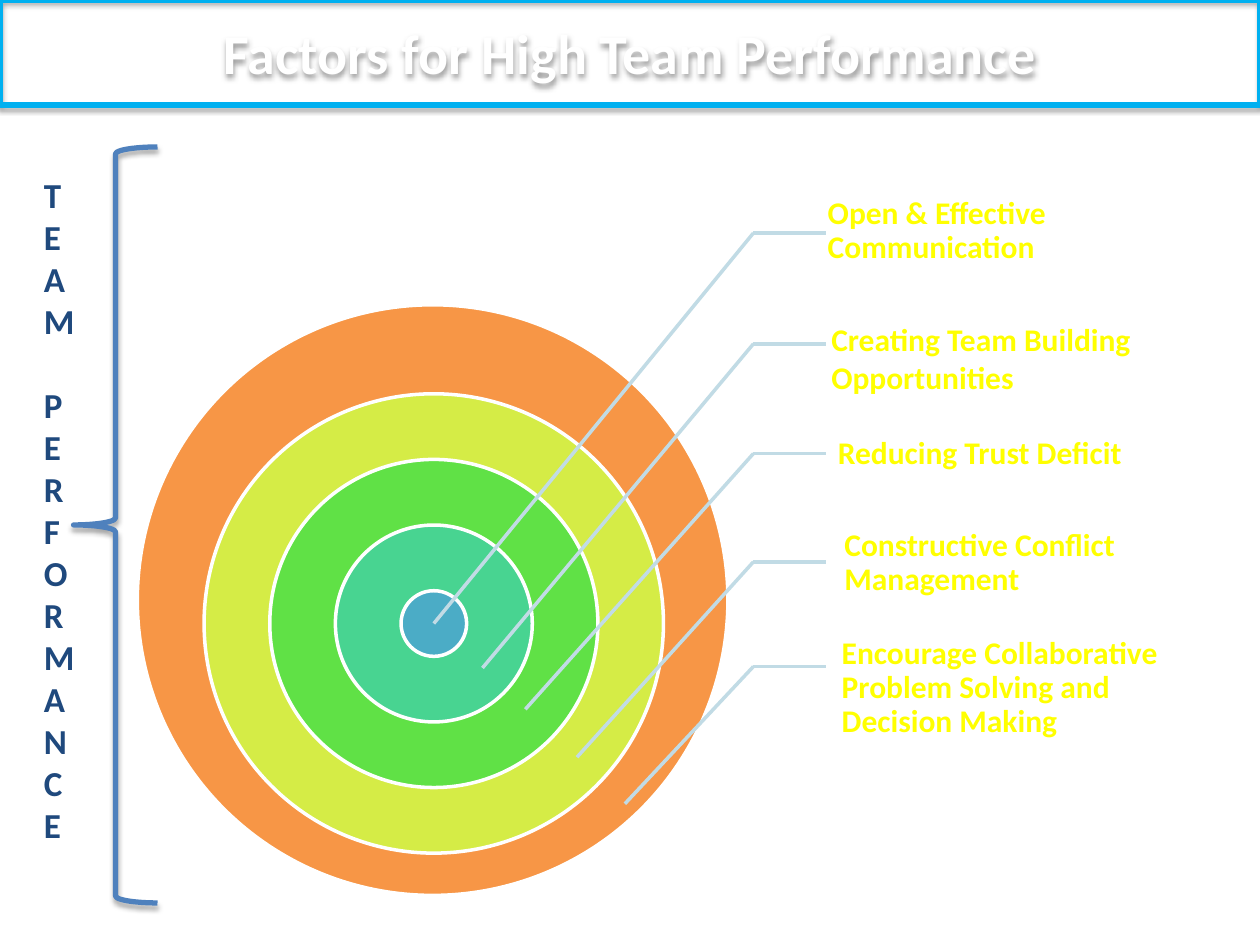
import pptx
import pptx.util
import pptx.dml.color
import pptx.enum.shapes
import pptx.enum.text
import pptx.oxml
import pptx.oxml.ns

Pt = pptx.util.Pt
SHAPE = pptx.enum.shapes.MSO_SHAPE
ANCHOR = pptx.enum.text.MSO_ANCHOR
ALIGN = pptx.enum.text.PP_ALIGN
COLORS = {
    "frame": "00B0F0", "white": "FFFFFF", "label": "FFFF00", "leader": "C1DBE5",
    "brace": "4F81BD", "side": "1F497D", "shadow": "000000",
}
RING_COLORS = ["D5EC46", "60E146", "48D491", "4BACC6"]
OUTER_COLOR = "F79646"

# Text, label box (left, top, width, height), line spacing, leader y, leader end;
# all positions are relative to the target region.
FACTORS = [
    ("Open & Effective Communication", (384.5, -72, 158.5, 60), 0.9, -41, (169.4, 182.1)),
    ("Creating Team Building Opportunities", (386.5, 0, 184.5, 60.5), 1, 22.3, (197.2, 207.5)),
    ("Reducing Trust Deficit", (390.3, 63.5, 185, 44), 0.9, 85, (221.7, 231.1)),
    ("Constructive Conflict Management", (394, 117.5, 168.5, 60), 0.9, 146.9, (251.2, 258.5)),
    ("Encourage Collaborative Problem Solving and Decision Making",
     (392.5, 191.5, 204.5, 55.5), 0.9, 206.7, (278.6, 285.1)),
]


def rgb(value):
    return pptx.dml.color.RGBColor.from_string(value)


def set_effects(shape, content=""):
    """Replace the theme's shadow by the given effects, or by none."""
    effects = pptx.oxml.parse_xml(
        f'<a:effectLst {pptx.oxml.ns.nsdecls("a")}>{content}</a:effectLst>')
    shape._element.spPr.append(effects)


def add_shadow(shape, blur, distance, opacity):
    set_effects(shape, (
        f'<a:outerShdw blurRad="{Pt(blur)}" dist="{Pt(distance)}" dir="5400000" '
        f'rotWithShape="0"><a:srgbClr val="{COLORS["shadow"]}">'
        f'<a:alpha val="{opacity * 1000}"/></a:srgbClr></a:outerShdw>'))


def add_outline(page, kind, box, color, width, fill=None):
    shape = page.shapes.add_shape(kind, *map(Pt, box))
    if fill:
        shape.fill.solid()
        shape.fill.fore_color.rgb = rgb(fill)
    else:
        shape.fill.background()
    shape.line.color.rgb = rgb(color)
    shape.line.width = Pt(width)
    return shape


def write(frame, text, size, color, align=ALIGN.LEFT, spacing=1):
    frame.word_wrap = True
    para = frame.paragraphs[0]
    para.alignment = align
    para.line_spacing = spacing
    span = para.add_run()
    span.text = text
    span.font.name = "Calibri"
    span.font.size = Pt(size)
    span.font.bold = True
    span.font.color.rgb = rgb(color)


def add_title(page, box):
    banner = add_outline(page, SHAPE.RECTANGLE, box, COLORS["frame"], 3)
    add_shadow(banner, 3.1, 1.6, 38)
    banner.text_frame.vertical_anchor = ANCHOR.MIDDLE
    write(banner.text_frame, "Factors for High Team Performance", 32,
          COLORS["white"], ALIGN.CENTER)


def add_leader(page, start, end):
    leader = page.shapes.add_connector(
        pptx.enum.shapes.MSO_CONNECTOR.STRAIGHT, *map(Pt, start + end))
    leader.line.color.rgb = rgb(COLORS["leader"])
    leader.line.width = Pt(2)
    set_effects(leader)


def add_label(page, box, text, spacing):
    frame = page.shapes.add_textbox(*map(Pt, box)).text_frame
    frame.margin_left = Pt(10)
    frame.margin_top = frame.margin_right = frame.margin_bottom = Pt(2)
    frame.vertical_anchor = ANCHOR.MIDDLE
    write(frame, text, 18, COLORS["label"], spacing=spacing)


def add_target(page, box):
    """Draw the rings in the box, with the labelled leaders to its right."""
    left, top, width, height = box
    circles = [(box, OUTER_COLOR)]
    center_x, center_y = left + 169.4, top + 182.1
    for index, color in enumerate(RING_COLORS):
        size = 262.5 - 75 * index
        circles.append(((center_x - size / 2, center_y - size / 2, size, size), color))
    for circle, color in circles:
        ring = add_outline(page, SHAPE.OVAL, circle, COLORS["white"], 2, color)
        ring.shadow.inherit = False

    for text, (x, y, label_width, label_height), spacing, level, (end_x, end_y) in FACTORS:
        add_label(page, (left + x, top + y, label_width, label_height), text, spacing)
        bend = (left + 352, top + level)
        add_leader(page, bend, (left + 393.8, top + level))
        add_leader(page, bend, (left + end_x, top + end_y))


def add_side_heading(page, box):
    """Set the heading one letter to a line, beside a brace."""
    left, top, width, height = box
    brace = add_outline(page, SHAPE.LEFT_BRACE, (left + 24, top, width - 24, height),
                        COLORS["brace"], 3)
    add_shadow(brace, 3.1, 1.8, 35)
    heading = page.shapes.add_textbox(Pt(left), Pt(top + 11.5), Pt(30), Pt(395.5))
    write(heading.text_frame, "TEAM PERFORMANCE", 20, COLORS["side"])
    heading.text_frame.auto_size = pptx.enum.text.MSO_AUTO_SIZE.SHAPE_TO_FIT_TEXT


def main():
    deck = pptx.Presentation()
    deck.slide_width, deck.slide_height = Pt(720), Pt(540)
    page = deck.slides.add_slide(deck.slide_layouts[6])
    add_title(page, (0, 0, 720, 60))
    add_target(page, (78.5, 174.2, 337.5, 337.5))
    add_side_heading(page, (18, 84, 72, 432))
    deck.save("out.pptx")


if __name__ == "__main__":
    main()
